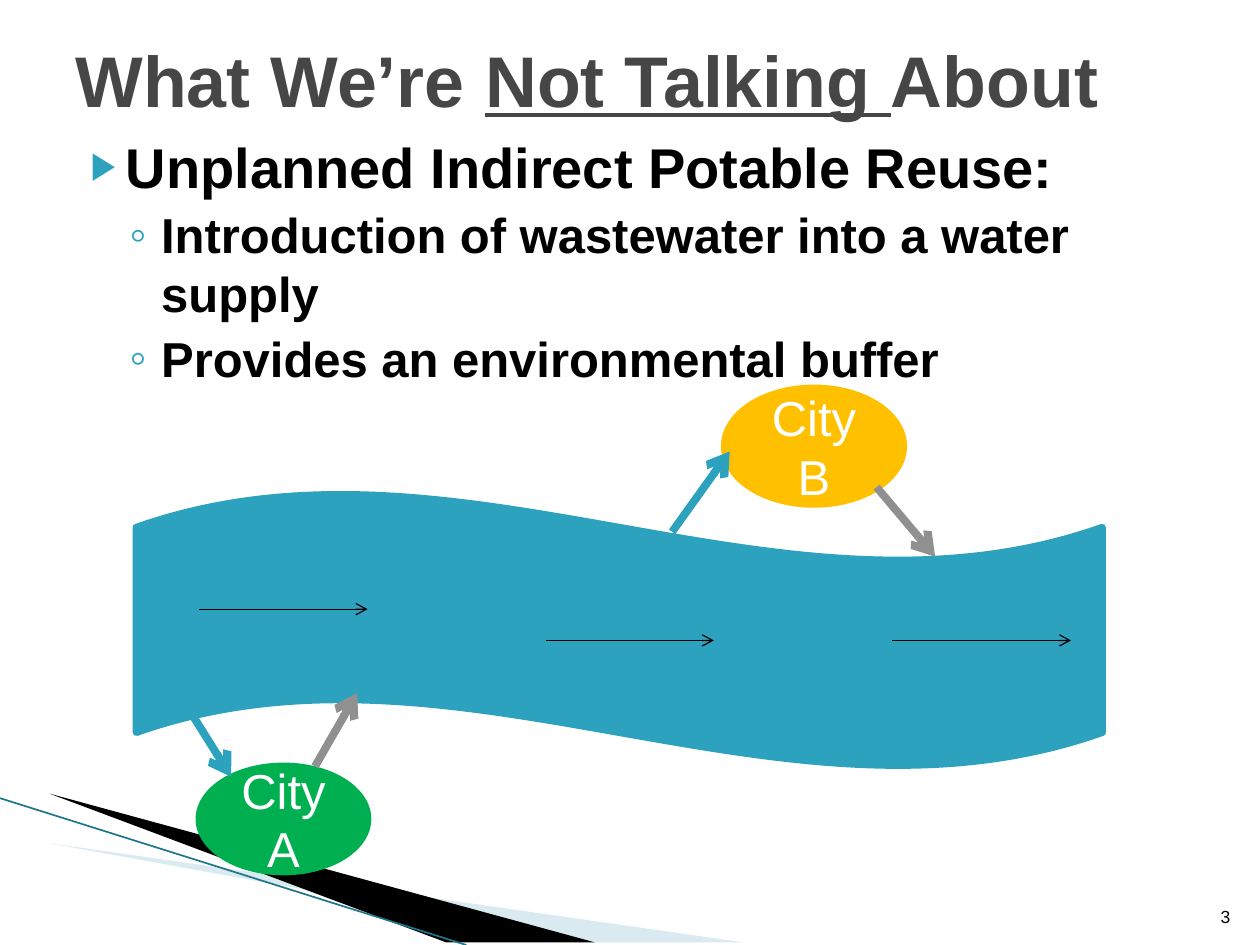
from lxml import etree
from pptx import Presentation
from pptx.dml.color import RGBColor
from pptx.enum.shapes import MSO_CONNECTOR, MSO_SHAPE
from pptx.enum.text import MSO_ANCHOR, MSO_AUTO_SIZE, PP_ALIGN
from pptx.oxml.ns import qn
from pptx.util import Cm, Pt

WAVE, ELLIPSE = MSO_SHAPE.WAVE, MSO_SHAPE.OVAL
STRAIGHT = MSO_CONNECTOR.STRAIGHT
LEFT, CENTER, RIGHT = PP_ALIGN.LEFT, PP_ALIGN.CENTER, PP_ALIGN.RIGHT
MIDDLE, BOTTOM = MSO_ANCHOR.MIDDLE, MSO_ANCHOR.BOTTOM
TITLE_ONLY = 5

TEAL, GRAY, BLACK, WHITE = "2DA2BF", "909090", "000000", "FFFFFF"
GREEN, AMBER, TITLE_GRAY = "00B050", "FFC000", "464646"
PALE_BLUE, DARK_TEAL = "A0CBDC", "1E768C"


def color(hex_text):
    return RGBColor.from_string(hex_text)


def add_child(parent, tag, **attributes):
    return etree.SubElement(parent, qn(tag), attributes)


def add_bullet(para, mark, size, indent, hanging):
    """Give the paragraph a teal bullet; size is in percent, indents in cm."""
    properties = para._p.get_or_add_pPr()
    properties.set("marL", str(Cm(indent)))
    properties.set("indent", str(-Cm(hanging)))
    add_child(add_child(properties, "a:buClr"), "a:srgbClr", val=TEAL)
    add_child(properties, "a:buSzPct", val=str(size * 1000))
    add_child(properties, "a:buFont", typeface="Arial")
    add_child(properties, "a:buChar", char=mark)


class SlideBuilder:
    """Holds the style and the current slide; lengths are in centimetres."""

    font_name = "Arial"
    outline = 4.33

    def __init__(self, deck):
        self.page = deck.slides.add_slide(deck.slide_layouts[TITLE_ONLY])
        self.shapes = self.page.shapes

    def style(self, font, size, hex_text, bold=False):
        font.name = self.font_name
        font.size = Pt(size)
        font.bold = bold
        font.color.rgb = color(hex_text)

    def title(self, parts, left, top, width, height):
        """Fill the title from (text, underlined) parts."""
        box = self.shapes.title
        box.left, box.top, box.width, box.height = map(Cm, (left, top, width, height))
        frame = box.text_frame
        frame.auto_size = MSO_AUTO_SIZE.NONE
        frame.vertical_anchor = MIDDLE
        para = frame.paragraphs[0]
        para.alignment = LEFT
        for text, underlined in parts:
            span = para.add_run()
            span.text = text
            self.style(span.font, 41, TITLE_GRAY, bold=True)
            span.font.underline = underlined

    def text_box(self, left, top, width, height):
        frame = self.shapes.add_textbox(*map(Cm, (left, top, width, height))).text_frame
        frame.word_wrap = True
        return frame

    def bullets(self, items, *place):
        """Add a bulleted list from (text, level) items."""
        frame = self.text_box(*place)
        frame.text = "\n".join(text for text, level in items)
        for index, (para, (text, level)) in enumerate(zip(frame.paragraphs, items)):
            para.level = level
            if index:
                para.space_before = Pt(3.2)
            if level:
                add_bullet(para, "◦", 100, 1.73, 0.64)
            else:
                add_bullet(para, "▶", 68, 1.02, 0.71)
            self.style(para.runs[0].font, 28 if level else 32, BLACK, bold=True)

    def page_number(self, text, *place):
        frame = self.text_box(*place)
        frame.vertical_anchor = BOTTOM
        frame.text = text
        para = frame.paragraphs[0]
        para.alignment = RIGHT
        self.style(para.runs[0].font, 10, BLACK)

    def shape(self, kind, hex_text, left, top, width, height, text=""):
        shape = self.shapes.add_shape(kind, *map(Cm, (left, top, width, height)))
        shape.shadow.inherit = False
        shape.fill.solid()
        shape.fill.fore_color.rgb = color(hex_text)
        shape.line.color.rgb = color(hex_text)
        shape.line.width = Pt(self.outline)
        if text:
            frame = shape.text_frame
            frame.word_wrap = True
            frame.vertical_anchor = MIDDLE
            frame.text = text
            para = frame.paragraphs[0]
            para.alignment = CENTER
            self.style(para.runs[0].font, 28, WHITE)

    def polygon(self, points, hex_text, opacity=100):
        builder = self.shapes.build_freeform(*points[0], scale=Cm(1))
        builder.add_line_segments(points[1:], close=True)
        shape = builder.convert_to_shape()
        shape.shadow.inherit = False
        shape.fill.solid()
        shape.fill.fore_color.rgb = color(hex_text)
        shape.line.fill.background()
        if opacity < 100:
            tint = shape._element.spPr.find(qn("a:solidFill"))[0]
            add_child(tint, "a:alpha", val=str(opacity * 1000))

    def line(self, start, end, hex_text, width, arrow=True):
        connector = self.shapes.add_connector(STRAIGHT, *map(Cm, start + end))
        connector.line.color.rgb = color(hex_text)
        connector.line.width = Pt(width)
        if arrow:
            add_child(connector.line._get_or_add_ln(), "a:tailEnd", type="arrow")
        add_child(connector._element.spPr, "a:effectLst")


def main():
    deck = Presentation()
    deck.slide_width, deck.slide_height = Cm(25.4), Cm(19.05)
    slide = SlideBuilder(deck)

    # Corner decoration
    slide.polygon([(1.4, 16.52), (15.1, 19.05), (11.6, 19.05)], PALE_BLUE, opacity=40)
    slide.polygon([(1.35, 16.48), (11.6, 19.05), (9.4, 19.05)], BLACK)
    slide.line((0, 16.09), (9.4, 19.05), DARK_TEAL, 0.95, arrow=False)

    slide.title([("What We’re ", False), ("Not Talking ", True), ("About", False)],
                1.27, 0, 22.86, 3.18)
    slide.bullets([("Unplanned Indirect Potable Reuse:", 0),
                   ("Introduction of wastewater into a water supply", 1),
                   ("Provides an environmental buffer", 1)],
                  1.27, 2.54, 22.86, 14.15)
    slide.page_number("3", 24.03, 17.8, 1.02, 1.02)

    # River and the two cities
    slide.shape(WAVE, TEAL, 2.75, 9.95, 19.47, 5.5)
    slide.shape(ELLIPSE, GREEN, 4.02, 15.45, 3.39, 2.12, "City A")
    slide.shape(ELLIPSE, AMBER, 14.61, 7.83, 3.6, 2.33, "City B")

    # Water drawn by each city (teal) and wastewater returned (gray)
    for start, end, hex_text in [((3.6, 13.97), (4.66, 15.66), TEAL),
                                 ((6.35, 15.45), (7.2, 13.97), GRAY),
                                 ((13.55, 10.72), (14.71, 9.1), TEAL),
                                 ((17.67, 9.82), (18.85, 11.22), GRAY)]:
        slide.line(start, end, hex_text, 4.5)

    # River flow
    for left, top, length in [(4.02, 12.28, 3.39), (17.99, 12.91, 3.6), (11, 12.91, 3.39)]:
        slide.line((left, top), (left + length, top), BLACK, 0.75)

    deck.save("out.pptx")


if __name__ == "__main__":
    main()
